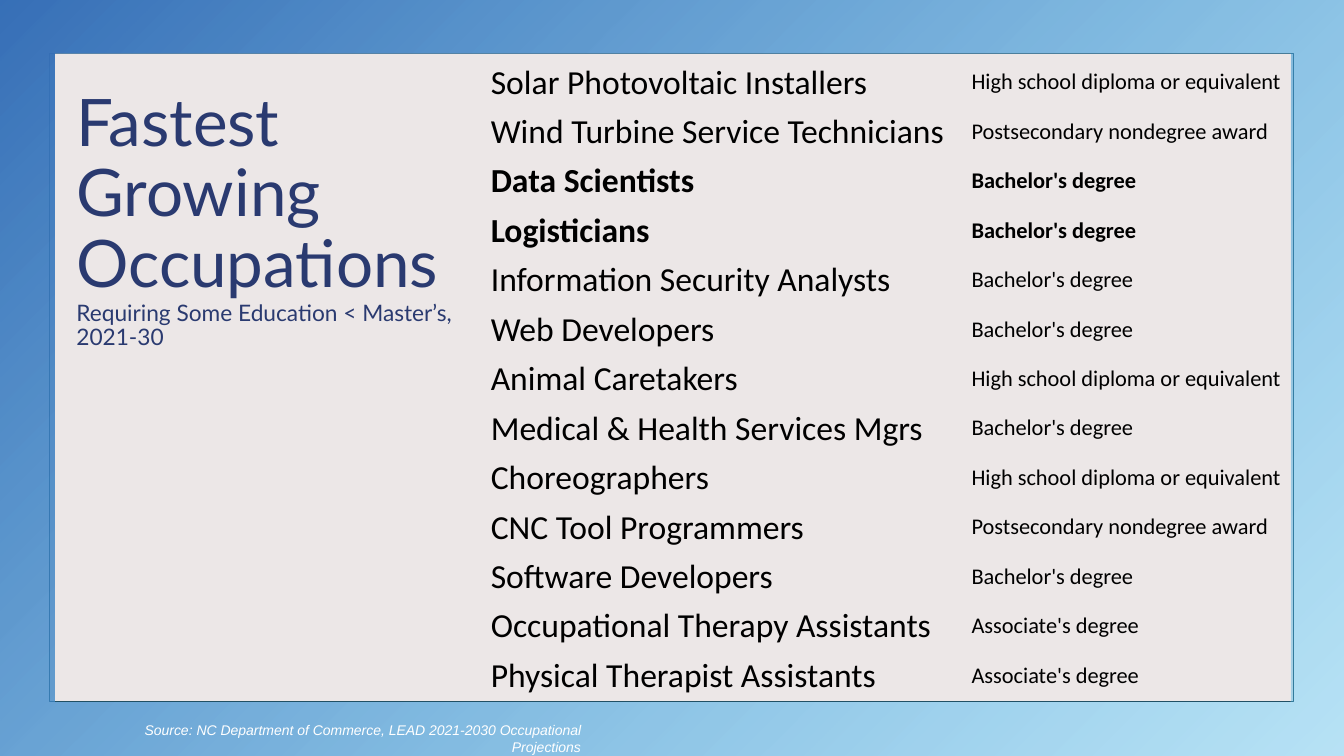
from lxml import etree
from pptx import Presentation
from pptx.dml.color import RGBColor
from pptx.enum.shapes import MSO_SHAPE as SHAPE
from pptx.enum.text import MSO_ANCHOR as ANCHOR, PP_ALIGN as ALIGN
from pptx.oxml.ns import qn
from pptx.util import Pt

PANEL = RGBColor(0xE8, 0xE2, 0xE2)
PANEL_LINE = RGBColor(0x21, 0x50, 0x65)
FRAME_START = RGBColor(0x37, 0x70, 0xB8)
FRAME_END = RGBColor(0x4C, 0xB7, 0xE7)
NAVY = RGBColor(0x2A, 0x3A, 0x70)
BLACK = RGBColor(0, 0, 0)
WHITE = RGBColor(0xFF, 0xFF, 0xFF)

NO_STYLE = "{2D5ABB26-0587-4C30-8999-92F81FD0307C}"
HIGH_SCHOOL = "High school diploma or equivalent"
POSTSECONDARY = "Postsecondary nondegree award"
ASSOCIATE = "Associate's degree"
BACHELOR = "Bachelor's degree"
OCCUPATIONS = [
    ("Solar Photovoltaic Installers", HIGH_SCHOOL),
    ("Wind Turbine Service Technicians", POSTSECONDARY),
    ("Data Scientists", BACHELOR),
    ("Logisticians", BACHELOR),
    ("Information Security Analysts", BACHELOR),
    ("Web Developers", BACHELOR),
    ("Animal Caretakers", HIGH_SCHOOL),
    ("Medical & Health Services Mgrs", BACHELOR),
    ("Choreographers", HIGH_SCHOOL),
    ("CNC Tool Programmers", POSTSECONDARY),
    ("Software Developers", BACHELOR),
    ("Occupational Therapy Assistants", ASSOCIATE),
    ("Physical Therapist Assistants", ASSOCIATE),
]
HIGHLIGHTED = {"Data Scientists", "Logisticians"}


class Deck:
    """Draws styled elements on the current slide, with lengths in points."""

    def __init__(self, width, height):
        self.prs = Presentation()
        self.prs.slide_width, self.prs.slide_height = Pt(width), Pt(height)
        self.s = self.prs.slides.add_slide(self.prs.slide_layouts[6])

    def set_alpha(self, sp, percent):
        color = sp._element.spPr.findall(".//" + qn("a:srgbClr"))[-1]
        etree.SubElement(color, qn("a:alpha")).set("val", str(percent * 1000))

    def style(self, r, font, size, color, bold=False, italic=False):
        r.font.name, r.font.size = font, Pt(size)
        r.font.bold, r.font.italic = bold, italic
        r.font.color.rgb = color

    def panel(self, *box):
        sp = self.s.shapes.add_shape(SHAPE.RECTANGLE, *map(Pt, box))
        sp.shadow.inherit = False
        sp.fill.solid()
        sp.fill.fore_color.rgb = PANEL
        self.set_alpha(sp, 80)
        sp.line.color.rgb = PANEL_LINE
        sp.line.width = Pt(1)

    def frame(self, thickness, *box):
        sp = self.s.shapes.add_shape(SHAPE.FRAME, *map(Pt, box))
        sp.shadow.inherit = False
        sp.adjustments[0] = thickness
        sp.fill.gradient()
        sp.fill.gradient_angle = 315
        for stop, color in zip(sp.fill.gradient_stops, (FRAME_START, FRAME_END)):
            stop.color.rgb = color
        self.set_alpha(sp, 40)
        sp.line.fill.background()

    def text(self, box, runs, font, color, anchor=ANCHOR.TOP, align=ALIGN.LEFT,
             spacing=1.0, italic=False):
        tf = self.s.shapes.add_textbox(*map(Pt, box)).text_frame
        tf.word_wrap = True
        tf.vertical_anchor = anchor
        p = tf.paragraphs[0]
        p.alignment, p.line_spacing = align, spacing
        for words, size in runs:
            r = p.add_run()
            r.text = words
            self.style(r, font, size, color, italic=italic)

    def table(self, left, top, widths, row_height, rows, sizes):
        shape = self.s.shapes.add_table(
            len(rows), len(widths), Pt(left), Pt(top),
            Pt(sum(widths)), Pt(row_height * len(rows)))
        table = shape.table
        table.first_row = table.horz_banding = False
        table._tbl.tblPr.find(qn("a:tableStyleId")).text = NO_STYLE
        for column, width in zip(table.columns, widths):
            column.width = Pt(width)
        for row, values in zip(table.rows, rows):
            row.height = Pt(row_height)
            for cell, value, size in zip(row.cells, values, sizes):
                cell.fill.background()
                cell.vertical_anchor = ANCHOR.MIDDLE
                cell.margin_left = cell.margin_right = Pt(5)
                cell.margin_top = cell.margin_bottom = 0
                cell.text_frame.text = value
                p = cell.text_frame.paragraphs[0]
                p.line_spacing = 1.07
                self.style(p.runs[0], "Calibri", size, BLACK,
                           bold=values[0] in HIGHLIGHTED)


def main():
    deck = Deck(960, 540)
    deck.panel(35.3, 38.2, 888.5, 463)
    deck.frame(0.072, 0, 0, 960, 540)
    deck.text((47.5, 53.3, 290.2, 208),
              [("Fastest Growing Occupations ", 46.8),
               ("Requiring Some Education < Master’s, 2021-30", 16.2)],
              "Lato", NAVY, anchor=ANCHOR.MIDDLE, spacing=0.9)
    deck.table(345.6, 40.3, (343.4, 234.4), 35.33, OCCUPATIONS, (24, 16))
    deck.text((77, 512, 345, 19.4),
              [("Source: NC Department of Commerce, LEAD 2021-2030 "
                "Occupational Projections", 10)],
              "Arial", WHITE, align=ALIGN.RIGHT, italic=True)
    deck.prs.save("out.pptx")


if __name__ == "__main__":
    main()
